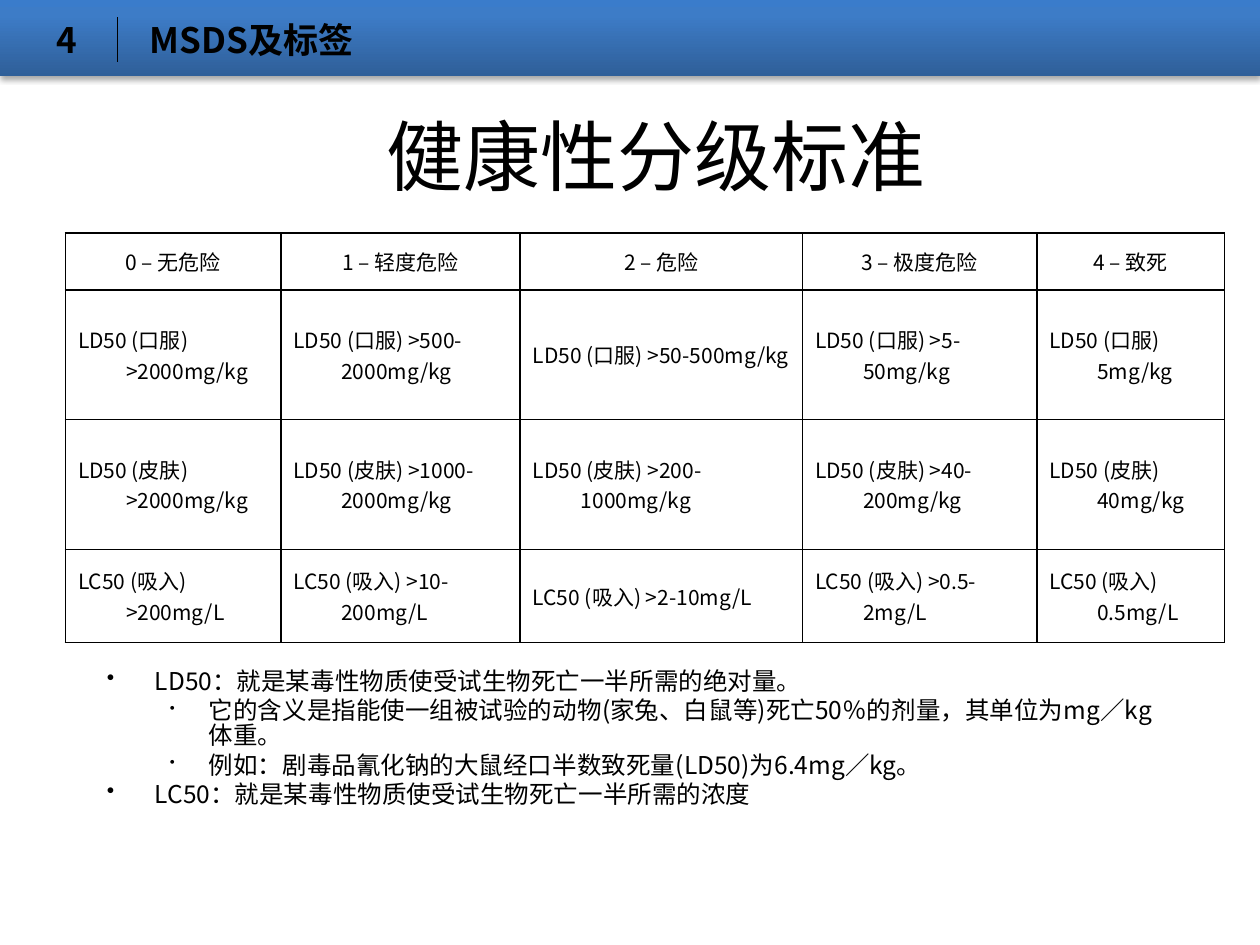
from copy import deepcopy
from dataclasses import dataclass

from lxml.etree import SubElement
from pptx import Presentation
from pptx.dml.color import RGBColor as Rgb
from pptx.enum.shapes import MSO_CONNECTOR as Link, MSO_SHAPE as Kind
from pptx.enum.text import MSO_ANCHOR as Anchor, PP_ALIGN as Align
from pptx.oxml.ns import qn
from pptx.util import Pt


@dataclass(frozen=True)
class Theme:
    font: str = "Noto Sans CJK SC"
    ink: str = "000000"
    bar: tuple = ((0, "2F5F99"), (0.8, "3D7CC7"), (1, "3A7CCB"))
    title: int = 44
    head: int = 20
    body: int = 14
    cell: int = 12


THEME = Theme()

HEADS = ["无危险", "轻度危险", "危险", "极度危险", "致死"]
LIMITS = {
    "LD50 (口服)": [">2000mg/kg", ">500-2000mg/kg", ">50-500mg/kg", ">5-50mg/kg", "5mg/kg"],
    "LD50 (皮肤)": [">2000mg/kg", ">1000-2000mg/kg", ">200-1000mg/kg", ">40-200mg/kg", "40mg/kg"],
    "LC50 (吸入)": [">200mg/L", ">10-200mg/L", ">2-10mg/L", ">0.5-2mg/L", "0.5mg/L"],
}
COLS = [123.1, 136.8, 161.3, 133.9, 107.3]
ROWS = [32.4, 74.2, 74.2, 53.2]

NOTES = [
    (0, "LD50：就是某毒性物质使受试生物死亡一半所需的绝对量。"),
    (1, "它的含义是指能使一组被试验的动物(家兔、白鼠等)死亡50％的剂量，其单位为mg／kg体重。"),
    (1, "例如：剧毒品氰化钠的大鼠经口半数致死量(LD50)为6.4mg／kg。"),
    (0, "LC50：就是某毒性物质使受试生物死亡一半所需的浓度"),
]
# Left margin, hanging indent and bullet size (%) of each level
LEVELS = [(27.4, 27.4, 90), (58.3, 22.3, 60)]


def style(para, size, bold=False, align=Align.LEFT):
    para.alignment = align
    for run in para.runs:
        font = run.font
        font.name, font.size, font.bold = THEME.font, Pt(size), bold
        font.color.rgb = Rgb.from_string(THEME.ink)
        SubElement(run._r.get_or_add_rPr(), qn("a:ea"), typeface=THEME.font)


def indent(para, left, hang):
    props = para._p.get_or_add_pPr()
    props.set("marL", str(Pt(left)))
    props.set("indent", str(-Pt(hang)))
    return props


def add_text(slide, box, text, size, bold=False, align=Align.LEFT, inset=0):
    frame = slide.shapes.add_textbox(*map(Pt, box)).text_frame
    frame.word_wrap = True
    frame.vertical_anchor = Anchor.MIDDLE
    frame.margin_left = frame.margin_right = Pt(inset)
    frame.margin_top = frame.margin_bottom = Pt(inset / 2)
    frame.text = text
    for para in frame.paragraphs:
        style(para, size, bold, align)
    return frame


def add_bar(slide, box):
    x, y, w, h = box
    bar = slide.shapes.add_shape(Kind.RECTANGLE, *map(Pt, box))
    bar.line.fill.background()

    # Three-stop gradient, dark at the foot
    bar.fill.gradient()
    bar.fill.gradient_angle = 90
    props = bar._element.spPr
    stops = props.find(".//" + qn("a:gsLst"))
    stops.append(deepcopy(stops[0]))
    for stop, (pos, color) in zip(bar.fill.gradient_stops, THEME.bar):
        stop.position = pos
        stop.color.rgb = Rgb.from_string(color)

    # Soft shadow below
    bar.shadow.inherit = False
    shade = SubElement(props.find(qn("a:effectLst")), qn("a:outerShdw"),
                       blurRad=str(Pt(3.1)), dist=str(Pt(1.8)),
                       dir="5400000", rotWithShape="0")
    tint = SubElement(shade, qn("a:srgbClr"), val=THEME.ink)
    SubElement(tint, qn("a:alpha"), val="35000")

    # Section number, name and divider
    add_text(slide, (x + 19.4, y + 0.7, 38.2, h), "4", THEME.head, True, Align.CENTER)
    add_text(slide, (x + 85.7, y + 0.7, 211, h), "MSDS及标签", THEME.head, True)
    rule = slide.shapes.add_connector(
        Link.STRAIGHT, *map(Pt, (x + 67, y + 10, x + 67, y + 35.2)))
    rule.line.width = Pt(0.75)
    rule.line.color.rgb = Rgb.from_string(THEME.ink)
    SubElement(rule._element.spPr, qn("a:effectLst"))


def add_border(cell):
    props = cell._tc.get_or_add_tcPr()
    for spot, side in enumerate(("lnL", "lnR", "lnT", "lnB")):
        line = props.makeelement(qn("a:" + side), {"w": str(Pt(1))})
        fill = SubElement(line, qn("a:solidFill"))
        SubElement(fill, qn("a:srgbClr"), val=THEME.ink)
        props.insert(spot, line)


def add_grid(slide, box):
    grid = [[f"{n} – {name}" for n, name in enumerate(HEADS)]]
    grid += [[f"{test} {limit}" for limit in limits] for test, limits in LIMITS.items()]
    table = slide.shapes.add_table(len(ROWS), len(COLS), *map(Pt, box)).table
    for col, width in zip(table.columns, COLS):
        col.width = Pt(width)
    for r, (row, height) in enumerate(zip(table.rows, ROWS)):
        row.height = Pt(height)
        for cell, text in zip(row.cells, grid[r]):
            cell.text = text
            cell.vertical_anchor = Anchor.MIDDLE
            cell.fill.background()
            add_border(cell)
            para = cell.text_frame.paragraphs[0]
            style(para, THEME.cell, align=Align.LEFT if r else Align.CENTER)
            indent(para, 27.4, 27.4)


def add_notes(slide, box):
    text = "\n".join(note for _, note in NOTES)
    frame = add_text(slide, box, text, THEME.body, inset=7.2)
    frame.vertical_anchor = Anchor.TOP
    for para, (level, _) in zip(frame.paragraphs, NOTES):
        para.level = level
        para.line_spacing = 0.86
        para.space_before = Pt(2.2)
        left, hang, size = LEVELS[level]
        props = indent(para, left, hang)
        SubElement(props, qn("a:buSzPct"), val=str(size * 1000))
        SubElement(props, qn("a:buChar"), char="•")


def main():
    deck = Presentation()
    deck.slide_width, deck.slide_height = Pt(720), Pt(540)
    slide = deck.slides.add_slide(deck.slide_layouts[6])
    add_bar(slide, (0, 0, 720, 43.2))
    add_text(slide, (120.2, 43.2, 509.8, 90), "健康性分级标准",
             THEME.title, align=Align.CENTER, inset=7.2)
    add_grid(slide, (37.4, 133.2, sum(COLS), sum(ROWS)))
    add_notes(slide, (54, 379.4, 624.2, 102.2))
    deck.save("out.pptx")


if __name__ == "__main__":
    main()
